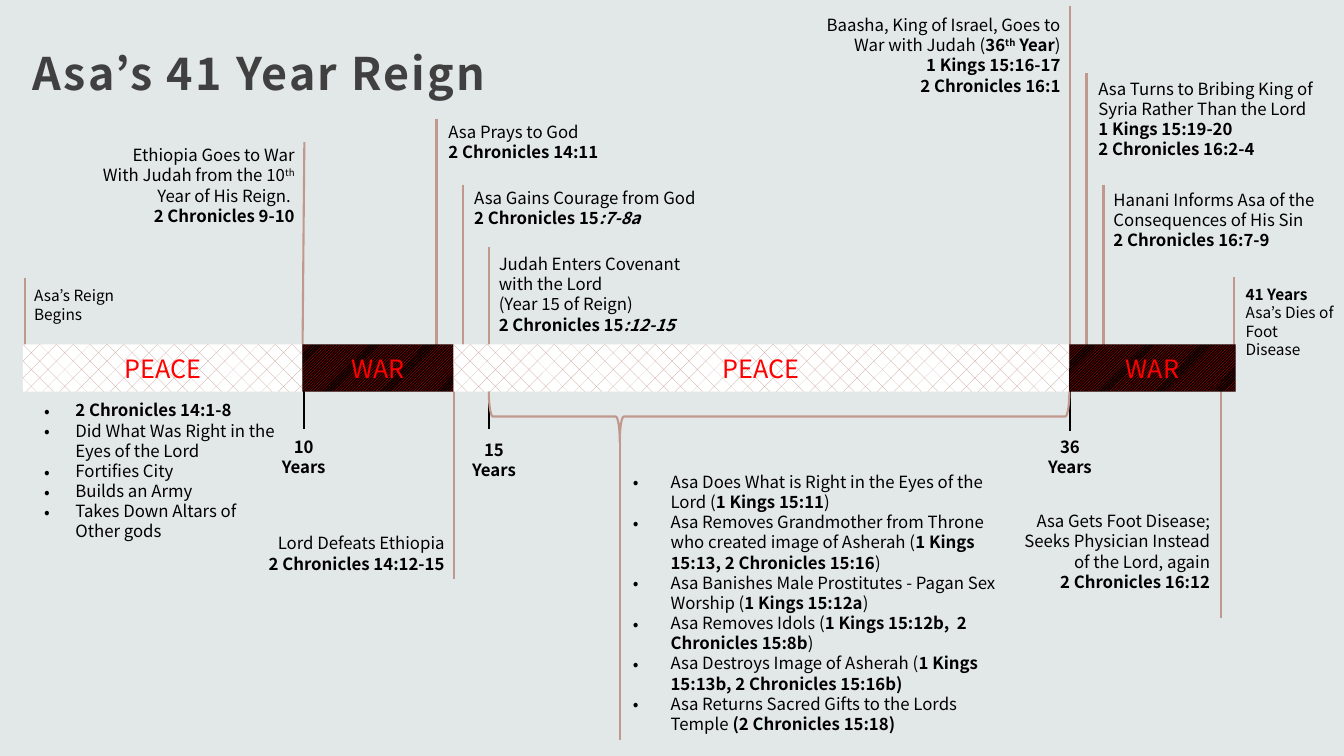
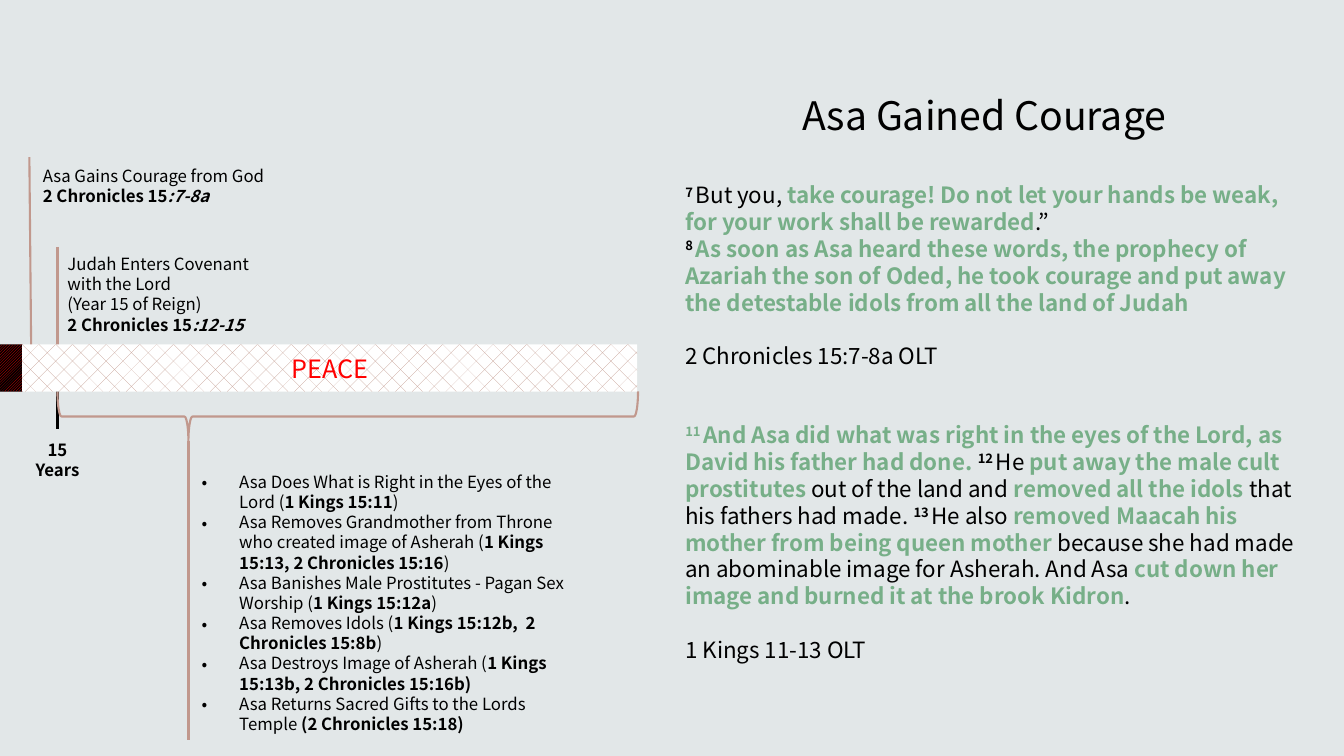
from lxml.etree import SubElement
from pptx import Presentation
from pptx.dml.color import RGBColor
from pptx.enum.dml import MSO_PATTERN
from pptx.enum.shapes import MSO_CONNECTOR, MSO_SHAPE
from pptx.enum.text import MSO_ANCHOR, MSO_AUTO_SIZE, PP_ALIGN
from pptx.oxml.ns import qn
from pptx.util import Cm, Pt

FONT = "Noto Sans CJK JP"
HUES = {"back": "E2E7E8", "rose": "C1988D", "ink": "000000", "head": "404040",
        "red": "FF0000", "white": "FFFFFF", "green": "77AF88"}
RGB = {name: RGBColor.from_string(code) for name, code in HUES.items()}
LEFT, MID, RIGHT = PP_ALIGN.LEFT, PP_ALIGN.CENTER, PP_ALIGN.RIGHT
BAR_TOP, BAR_H = 8.68, 1.19
AXIS = BAR_TOP + BAR_H / 2
SPAN, STEM = 14.63, 3.3


def write(shape, text, size=12, hue="ink", align=LEFT, anchor=MSO_ANCHOR.TOP,
          bullet=0, gap=0, lead=None, track=0):
    """Fill a shape line by line; * bold, _ italic, ^ raised and ~ green toggle.

    bullet is the hanging indent in cm, gap the points above the last line.
    """
    frame = shape.text_frame
    frame.word_wrap = True
    frame.auto_size = MSO_AUTO_SIZE.NONE
    frame.vertical_anchor = anchor
    lines = text.split("\n")
    for num, line in enumerate(lines):
        para = frame.add_paragraph() if num else frame.paragraphs[0]
        para.alignment = align
        if lead:
            para.line_spacing = lead
        if gap and num == len(lines) - 1:
            para.space_before = Pt(gap)
        if bullet:
            props = para._p.get_or_add_pPr()
            props.set("marL", str(Cm(bullet)))
            props.set("indent", str(-Cm(bullet)))
            SubElement(props, qn("a:buFont")).set("typeface", FONT)
            SubElement(props, qn("a:buChar")).set("char", "•")
        style, run = set(), None
        for char in line:
            if char in "*_^~":
                style ^= {char}
                run = None
                continue
            if run is None:
                run = para.add_run()
                font = run.font
                font.name, font.size = FONT, Pt(size)
                font.bold, font.italic = "*" in style, "_" in style
                font.color.rgb = RGB["green" if "~" in style else hue]
                if "^" in style:
                    run._r.get_or_add_rPr().set("baseline", "30000")
                if track:
                    run._r.get_or_add_rPr().set("spc", str(track))
            run.text += char


def rule(slide, x, y, end, hue="rose", foot=None):
    """Draw a line from (x, y) to height end, upright unless foot is given."""
    foot = x if foot is None else foot
    line = slide.shapes.add_connector(
        MSO_CONNECTOR.STRAIGHT, Cm(x), Cm(y), Cm(foot), Cm(end))
    line.line.color.rgb = RGB[hue]
    line.line.width = Pt(1.5)
    SubElement(line._element.spPr, qn("a:effectLst"))


deck = Presentation()
deck.slide_width, deck.slide_height = Cm(33.87), Cm(19.05)
ground = deck.slide_master.background.fill
ground.solid()
ground.fore_color.rgb = RGB["back"]

# Slides and titles
reign, hope = [deck.slides.add_slide(deck.slide_layouts[5]) for _ in range(2)]
titles = [
    (reign, (0.56, 0.61, 24.36, 2.49), "*Asa’s 41 Year Reign*",
     dict(size=32, hue="head", lead=1.3, track=150)),
    (hope, (19.96, 2.18, 10.5, 1.45), "Asa Gained Courage", dict(size=28)),
]
for slide, box, text, form in titles:
    title = slide.shapes.title
    title.left, title.top, title.width, title.height = map(Cm, box)
    write(title, text, **form)

# Event lines of the whole reign, from the axis up or down
for x, y in [(0.64, 7.01), (11, 3), (11.43, 14.58), (26.97, 0.15),
             (27.38, 1.85), (27.81, 4.65), (30.78, 15.57), (31.09, 6.99)]:
    rule(reign, x, y, AXIS)
rule(reign, 7.67, 3.58, AXIS, foot=7.62)
rule(reign, 7.67, AXIS, 10.82, "ink")
rule(reign, 26.97, AXIS, 10.87, "ink")

# Notes of each slide
notes = [
    (reign, (0.61, 7.09, 2.95, 1.19), "Asa’s Reign Begins", dict(size=11)),
    (reign, (31.14, 7.06, 2.73, 2.13),
     "*41 Years*\nAsa’s Dies of Foot Disease", dict(size=11)),
    (reign, (6.58, 10.87, 2.15, 1.27), "*10*\n*Years*", dict(align=MID)),
    (reign, (25.89, 10.87, 2.15, 1.27), "*36*\n*Years*", dict(align=MID)),
    (reign, (2.24, 3.53, 5.44, 2.31),
     "Ethiopia Goes to War With Judah from the 10^th^ Year of His Reign. \n"
     "*2 Chronicles 9-10*", dict(align=RIGHT)),
    (reign, (11.05, 2.95, 4.72, 1.27),
     "Asa Prays to God\n*2 Chronicles 14:11*", {}),
    (reign, (5.72, 13.31, 5.74, 1.27),
     "Lord Defeats Ethiopia\n*2 Chronicles 14:12-15*", dict(align=RIGHT)),
    (reign, (0.86, 9.96, 6.38, 3.84),
     "*2 Chronicles 14:1-8*\n"
     "Did What Was Right in the Eyes of the Lord\n"
     "Fortifies City\n"
     "Builds an Army\n"
     "Takes Down Altars of Other gods", dict(bullet=0.79)),
    (reign, (20.07, 0.25, 6.91, 2.31),
     "Baasha, King of Israel, Goes to War with Judah (*36^th^ Year*)\n"
     "*1 Kings 15:16-17*\n*2 Chronicles 16:1*", dict(align=RIGHT)),
    (reign, (27.43, 1.85, 6.44, 2.31),
     "Asa Turns to Bribing King of Syria Rather Than the Lord\n"
     "*1 Kings 15:19-20*\n*2 Chronicles 16:2-4*", {}),
    (reign, (27.81, 4.65, 6.05, 1.8),
     "Hanani Informs Asa of the Consequences of His Sin\n"
     "*2 Chronicles 16:7-9*", {}),
    (reign, (25.45, 12.75, 5.3, 2.82),
     "Asa Gets Foot Disease; Seeks Physician Instead of the Lord, again\n"
     "*2 Chronicles 16:12*", dict(align=RIGHT)),
    (hope, (17.02, 4.45, 16.21, 5.05),
     "*^7 ^*But you, *~take courage! Do not let your hands be weak, "
     "for your work shall be rewarded~*.”\n"
     "*^8 ^~As soon as Asa heard these words, the prophecy of Azariah the "
     "son of Oded, he took courage and put away the detestable idols from "
     "all the land of Judah~*\n"
     "2 Chronicles 15:7-8a OLT", dict(size=16, gap=19)),
    (hope, (17.02, 10.49, 16.21, 7.09),
     "*~^11 ^And Asa did what was right in the eyes of the Lord, as David "
     "his father had done. ~^12 ^*He *~put away the male cult prostitutes ~*"
     "out of the land and *~removed all the idols ~*that his fathers had "
     "made. *^13 ^*He also *~removed Maacah his mother from being queen "
     "mother ~*because she had made an abominable image for Asherah. And "
     "Asa *~cut down her image and burned it at the brook Kidron~*.\n"
     "1 Kings 11-13 OLT", dict(size=16, gap=19)),
]

# The second peace stands on both slides, placed by its year 15 line
deeds = (
    "Asa Does What is Right in the Eyes of the Lord (*1 Kings 15:11*)\n"
    "Asa Removes Grandmother from Throne who created image of Asherah "
    "(*1 Kings 15:13, 2 Chronicles 15:16*)\n"
    "Asa Banishes Male Prostitutes - Pagan Sex Worship (*1 Kings 15:12a*)\n"
    "Asa Removes Idols (*1 Kings 15:12b,  2 Chronicles 15:8b*)\n"
    "Asa Destroys Image of Asherah (*1 Kings 15:13b, 2 Chronicles 15:16b)*\n"
    "Asa Returns Sacred Gifts to the Lords Temple *(2 Chronicles 15:18)*")
bars = [(reign, 0.58, 7.04, "PEACE"), (reign, 7.62, 3.81, "WAR"),
        (reign, 26.95, 4.19, "WAR"), (hope, 0, 0.58, "")]
for slide, x, year, tip, top, high in [
        (reign, 12.32, 11.51, 11.66, 4.65, 4.6),
        (hope, 1.45, 0.51, 0.74, 3.96, 4.04)]:
    rule(slide, tip, top, AXIS, foot=x - 0.66)
    rule(slide, x, 6.22, AXIS)
    rule(slide, x, AXIS, 10.82, "ink")
    rule(slide, x + STEM, 11.1, 18.64)
    brace = slide.shapes.add_shape(
        MSO_SHAPE.LEFT_BRACE, Cm(x + 6.68), Cm(3.18), Cm(1.27), Cm(SPAN))
    brace.rotation = 270
    brace.adjustments[0], brace.adjustments[1] = 0.08, STEM / SPAN
    brace.shadow.inherit = False
    brace.fill.background()
    brace.line.color.rgb = RGB["rose"]
    brace.line.width = Pt(1.5)
    bars.append((slide, x - 0.89, 15.5, "PEACE"))
    notes += [
        (slide, (year, 10.95, 1.88, 1.27), "*15*\n*Years*", dict(align=MID)),
        (slide, (x + 3.38, 11.76, 9.93, 6.93), deeds, dict(bullet=0.95)),
        (slide, (x - 0.62, high, 6.53, 1.27),
         "Asa Gains Courage from God\n*2 Chronicles 15_:7-8a_*", {}),
        (slide, (x, 6.27, 5.74, 2.31),
         "Judah Enters Covenant with the Lord\n(Year 15 of Reign)\n"
         "*2 Chronicles 15_:12-15_*", {}),
    ]

for slide, x, wide, label in bars:
    bar = slide.shapes.add_shape(
        MSO_SHAPE.RECTANGLE, Cm(x), Cm(BAR_TOP), Cm(wide), Cm(BAR_H))
    bar.shadow.inherit = False
    bar.line.fill.background()
    bar.fill.patterned()
    calm = label == "PEACE"
    bar.fill.pattern = (MSO_PATTERN.DOTTED_DIAMOND if calm
                        else MSO_PATTERN.LIGHT_UPWARD_DIAGONAL)
    bar.fill.fore_color.rgb = RGB["rose" if calm else "red"]
    bar.fill.back_color.rgb = RGB["white" if calm else "ink"]
    write(bar, label, size=18, hue="red", align=MID, anchor=MSO_ANCHOR.MIDDLE)

for slide, box, text, form in notes:
    write(slide.shapes.add_textbox(*map(Cm, box)), text, **form)

deck.save("out.pptx")
